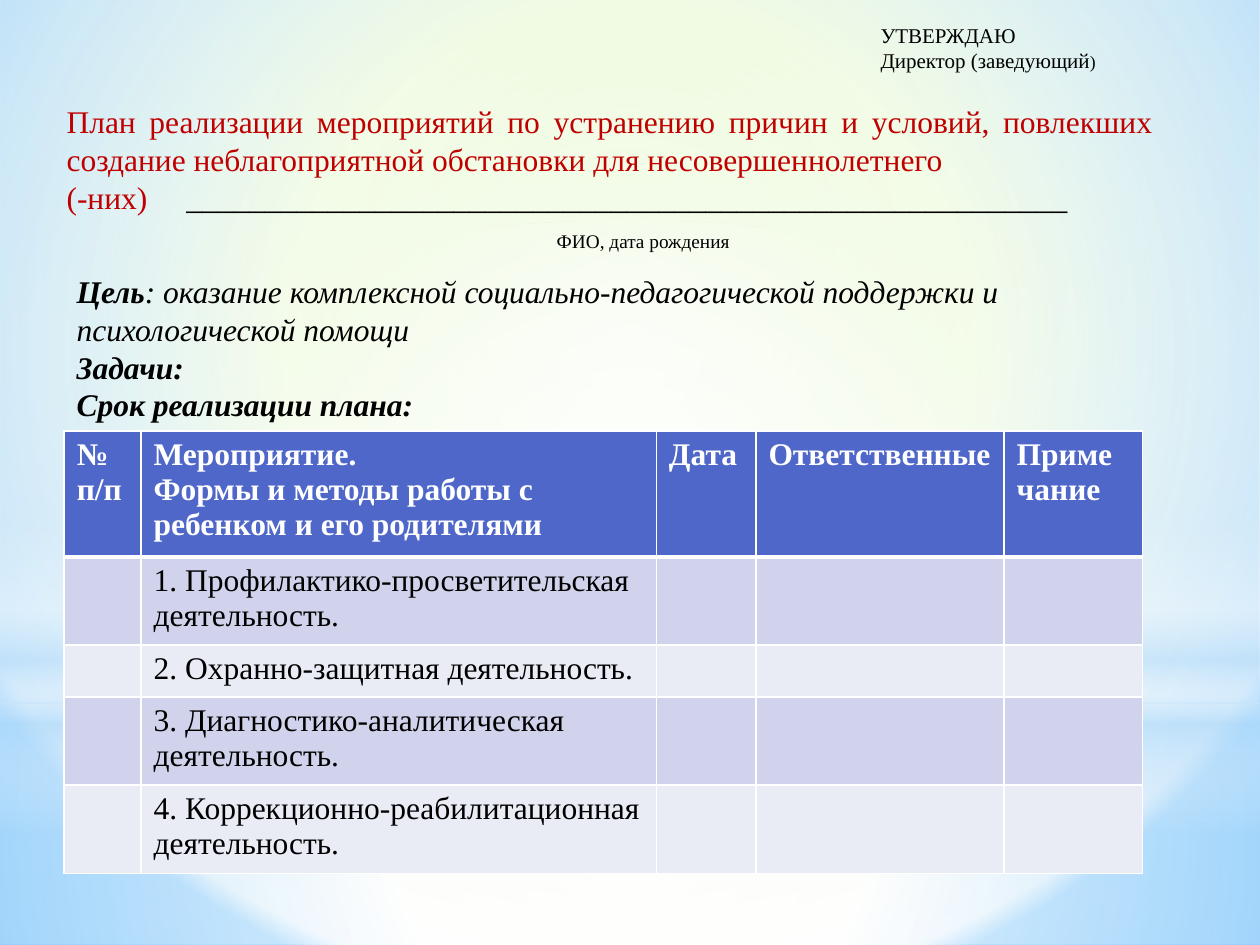
from lxml.etree import SubElement
from pptx import Presentation
from pptx.dml.color import RGBColor as Color
from pptx.enum.shapes import MSO_SHAPE as Shape
from pptx.enum.text import PP_ALIGN as Align
from pptx.oxml.ns import qn
from pptx.util import Inches, Pt

COLUMNS, ROWS = 100, 75  # grid over the whole slide
WIDTH, HEIGHT = Inches(10), Inches(7.5)

BLACK = Color(0x00, 0x00, 0x00)
WHITE = Color(0xFF, 0xFF, 0xFF)
RED = Color(0xC0, 0x00, 0x00)
GREEN = Color(0xCA, 0xF2, 0x97)
SKY = Color(0x5B, 0xB9, 0xFF)
PALE_SKY = Color(0xB4, 0xDC, 0xFA)
HEADER = Color(0x4E, 0x67, 0xC8)
BANDS = Color(0xD0, 0xD3, 0xEB), Color(0xE9, 0xEB, 0xF5)


def across(columns):
    return round(WIDTH * columns / COLUMNS)


def down(rows):
    return round(HEIGHT * rows / ROWS)


def place(left, top, width, height):
    return across(left), down(top), across(width), down(height)


def add_span(para, text, size=18, color=BLACK, bold=False, italic=False):
    span = para.add_run()
    span.text = text
    font = span.font
    font.name, font.size = "Times New Roman", Pt(size)
    font.bold, font.italic = bold, italic
    font.color.rgb = color


def add_color(parent, color, alpha=100):
    node = SubElement(parent, qn("a:srgbClr"), val=str(color))
    if alpha < 100:
        SubElement(node, qn("a:alpha"), val=str(alpha * 1000))


def set_gradient(owner, stops, focus=None):
    """Fill with (position, color, alpha) stops: round about focus, or top to bottom."""
    owner.fill.gradient()
    element = owner.element if hasattr(owner, "element") else owner._cSld
    gradient = element.find(".//" + qn("a:gradFill"))
    for child in list(gradient):
        gradient.remove(child)
    stop_list = SubElement(gradient, qn("a:gsLst"))
    for position, color, alpha in stops:
        stop = SubElement(stop_list, qn("a:gs"), pos=str(position * 1000))
        add_color(stop, color, alpha)
    if focus is None:
        SubElement(gradient, qn("a:lin"), ang="5400000", scaled="0")
        return
    circle = SubElement(gradient, qn("a:path"))
    circle.set("path", "circle")
    sides = {side: str(share * 1000) for side, share in zip("ltrb", focus)}
    SubElement(circle, qn("a:fillToRect"), **sides)


def set_borders(cell, **widths):
    properties = cell._tc.get_or_add_tcPr()
    for index, side in enumerate("LRTB"):
        width = Pt(widths.get(side, 1))
        line = properties.makeelement(qn(f"a:ln{side}"), {"w": str(width)})
        add_color(SubElement(line, qn("a:solidFill")), WHITE)
        properties.insert(index, line)


class PlanSlide:
    def __init__(self, deck):
        self.slide = deck.slides.add_slide(deck.slide_layouts[6])

    def backdrop(self, stops, focus):
        set_gradient(self.slide.background, stops, focus)

    def glow(self, kind, area, stops, focus=None):
        shape = self.slide.shapes.add_shape(kind, *place(*area))
        shape.shadow.inherit = False
        shape.line.fill.background()
        set_gradient(shape, stops, focus)

    def text(self, area, paragraphs):
        """Each paragraph is a dict: spans, and optionally align, before, indent, tab."""
        frame = self.slide.shapes.add_textbox(*place(*area)).text_frame
        frame.word_wrap = True
        for index, content in enumerate(paragraphs):
            para = frame.add_paragraph() if index else frame.paragraphs[0]
            para.alignment = content.get("align", Align.LEFT)
            para.space_before = Pt(content.get("before", 0))
            properties = para._p.get_or_add_pPr()
            if "indent" in content:
                properties.set("marL", str(across(content["indent"])))
            if "tab" in content:
                tabs = SubElement(properties, qn("a:tabLst"))
                SubElement(tabs, qn("a:tab"), pos=str(across(content["tab"])), algn="l")
            for text, style in content["spans"]:
                add_span(para, text, **style)

    def table(self, left, top, widths, heights, header, activities):
        area = place(left, top, sum(widths), sum(heights))
        table = self.slide.shapes.add_table(
            len(heights), len(widths), *area).table
        for column, width in zip(table.columns, widths):
            column.width = across(width)
        for row, height in zip(table.rows, heights):
            row.height = down(height)
        rows = [header] + [["", name, "", "", ""] for name in activities]
        for r, row in enumerate(rows):
            for c, text in enumerate(row):
                cell = table.cell(r, c)
                cell.fill.solid()
                cell.fill.fore_color.rgb = BANDS[(r - 1) % 2] if r else HEADER
                set_borders(cell, T=3 if r == 1 else 1, B=1 if r else 3)
                self.fill_cell(cell, text, is_header=r == 0)

    def fill_cell(self, cell, text, is_header):
        frame = cell.text_frame
        for index, line in enumerate(text.splitlines()):
            para = frame.add_paragraph() if index else frame.paragraphs[0]
            add_span(para, line, color=WHITE if is_header else BLACK, bold=is_header)


def main():
    deck = Presentation()
    deck.slide_width, deck.slide_height = WIDTH, HEIGHT
    plan = PlanSlide(deck)

    center = (50, 50, 50, 50)
    plan.backdrop([(0, GREEN, 100), (97, WHITE, 100), (100, SKY, 100)], (20, 10, 20, 60))
    plan.glow(Shape.RECTANGLE, (0, 55.8, 100, 19.2),
              [(0, WHITE, 91), (37, WHITE, 76), (100, PALE_SKY, 79)], center)
    plan.glow(Shape.RECTANGLE, (0, 0, 100, 55.8),
              [(0, WHITE, 89), (48, WHITE, 62), (100, PALE_SKY, 79)], center)
    plan.glow(Shape.RECTANGLE, (0, 41.2, 100, 25),
              [(0, WHITE, 0), (29, WHITE, 30), (45, PALE_SKY, 40),
               (55, WHITE, 26), (65, PALE_SKY, 60), (100, WHITE, 0)])
    plan.glow(Shape.OVAL, (0, 17.5, 100, 55.8),
              [(0, WHITE, 100), (56, WHITE, 0)], center)

    small, red = dict(size=12), dict(color=RED)
    strong, slanted = dict(bold=True, italic=True), dict(italic=True)
    plan.text((68.9, 1.3, 20.5, 5.1), [
        dict(spans=[("УТВЕРЖДАЮ", small)]),
        dict(spans=[("Директор (заведующий", small), (")", dict(size=10))]),
    ])
    plan.text((4.3, 7.6, 88.2, 13.1), [
        dict(align=Align.JUSTIFY, spans=[(
            "План реализации мероприятий по устранению причин и условий, повлекших "
            "создание неблагоприятной обстановки для несовершеннолетнего", red)]),
        dict(tab=9.5, spans=[("(-них)\t", red), ("_" * 56, {})]),
        dict(indent=38.9, before=8, spans=[("ФИО, дата рождения", dict(size=11))]),
    ])
    plan.text((5.1, 21.1, 84.3, 13.1), [
        dict(spans=[("Цель", strong), (
            ": оказание комплексной социально-педагогической поддержки и "
            "психологической помощи", slanted)]),
        dict(spans=[("Задачи:", strong)]),
        dict(spans=[("Срок реализации плана:", strong)]),
    ])
    plan.table(
        5.1, 34.2, widths=(6.1, 40.9, 7.9, 19.7, 11), heights=(10, 7, 4.1, 7, 7),
        header=["№\nп/п",
                "Мероприятие.\nФормы и методы работы с ребенком и его родителями",
                "Дата", "Ответственные", "Приме\nчание"],
        activities=["1. Профилактико-просветительская деятельность.",
                    "2. Охранно-защитная деятельность.",
                    "3. Диагностико-аналитическая деятельность.",
                    "4. Коррекционно-реабилитационная деятельность."])
    deck.save("out.pptx")


if __name__ == "__main__":
    main()
